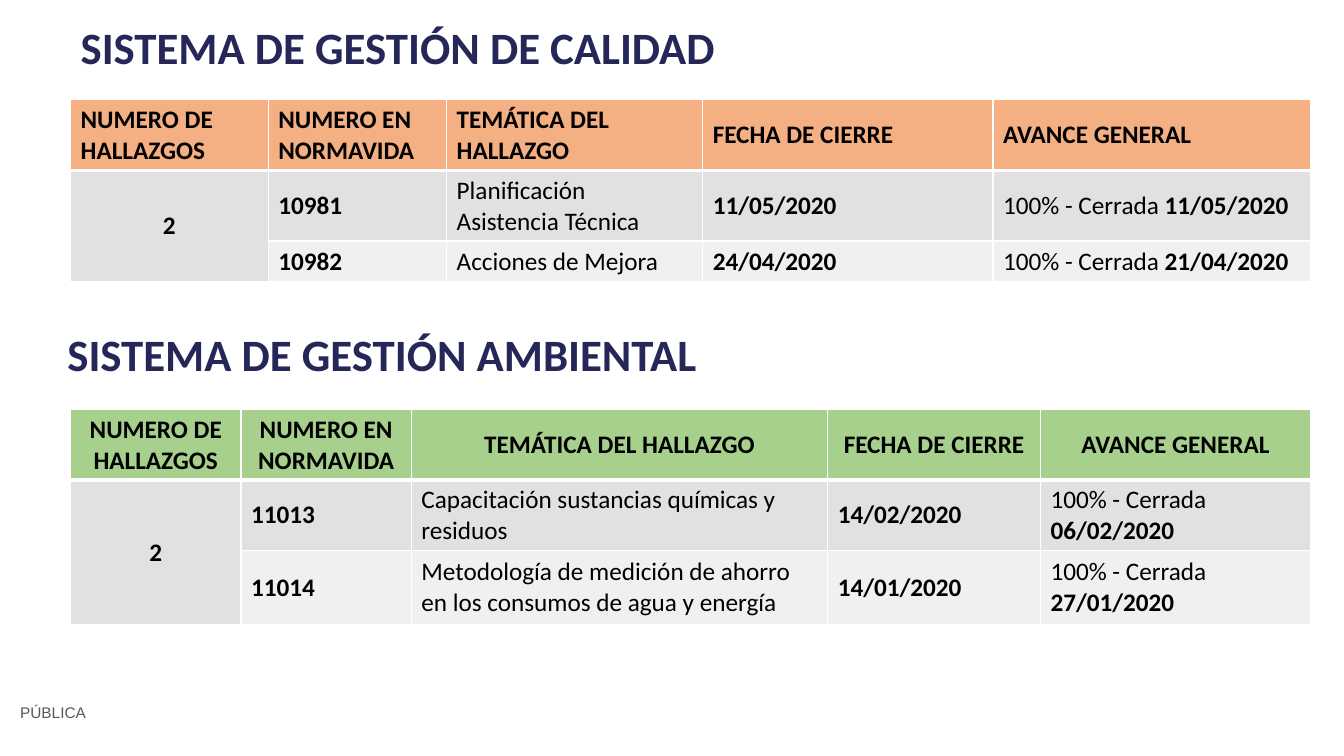
from dataclasses import dataclass

from lxml.etree import SubElement
from pptx import Presentation
from pptx.dml.color import RGBColor
from pptx.enum.text import MSO_ANCHOR as Anchor, MSO_AUTO_SIZE as AutoSize, PP_ALIGN as Align
from pptx.oxml.ns import qn
from pptx.util import Inches, Pt


@dataclass(frozen=True)
class Theme:
    font: str = "Calibri"
    label_font: str = "Arial"
    heading: str = "242758"
    label: str = "595959"
    text: str = "000000"
    border: str = "FFFFFF"
    bands: tuple = ("E1E1E1", "F0F0F0")
    heading_size: int = 32
    table_size: int = 18
    label_size: int = 11


@dataclass(frozen=True)
class Finding:
    number: str
    topic: str
    due: str
    closed: str


@dataclass(frozen=True)
class FindingsTable:
    top: float
    cols: tuple
    rows: tuple
    header_fill: str
    header_align: Align
    findings: tuple


THEME = Theme()
HEADERS = ("NUMERO DE HALLAZGOS", "NUMERO EN NORMAVIDA", "TEMÁTICA DEL HALLAZGO",
           "FECHA DE CIERRE", "AVANCE GENERAL")
TABLE_LEFT, TABLE_WIDTH = 0.7, 12.3
TABLES = (
    FindingsTable(0.99, (1.96, 1.77, 2.54, 2.88, 3.15), (0.7, 0.7, 0.4), "F4B083", Align.LEFT, (
        Finding("10981", "Planificación Asistencia Técnica", "11/05/2020", "11/05/2020"),
        Finding("10982", "Acciones de Mejora", "24/04/2020", "21/04/2020"))),
    FindingsTable(4.06, (1.69, 1.69, 4.13, 2.11, 2.68), (0.7, 0.7, 0.74), "A8D08D", Align.CENTER, (
        Finding("11013", "Capacitación sustancias químicas y residuos",
                "14/02/2020", "06/02/2020"),
        Finding("11014", "Metodología de medición de ahorro en los consumos de agua y energía",
                "14/01/2020", "27/01/2020"))),
)


def add_run(p, text: str, size: int, color: str, bold: bool, font: str = THEME.font) -> None:
    r = p.add_run()
    r.text = text
    for name, value in {"name": font, "size": Pt(size), "bold": bold}.items():
        setattr(r.font, name, value)
    r.font.color.rgb = RGBColor.from_string(color)


def write_box(sp, box: tuple, text: str, size: int, color: str, bold: bool, font: str) -> None:
    for name, value in zip(("left", "top", "width", "height"), box):
        setattr(sp, name, Inches(value))
    tf = sp.text_frame
    layout = {"word_wrap": True, "auto_size": AutoSize.SHAPE_TO_FIT_TEXT,
              "vertical_anchor": Anchor.TOP}
    for name, value in layout.items():
        setattr(tf, name, value)
    p = tf.paragraphs[0]
    p.alignment = Align.LEFT
    add_run(p, text, size, color, bold, font)


def set_borders(cell, row: int) -> None:
    """White rules, thicker between the header and the body."""
    widths = {"L": 1, "R": 1, "T": 3 if row == 1 else 1, "B": 3 if row == 0 else 1}
    tc_pr = cell._tc.get_or_add_tcPr()
    for side, width in widths.items():
        ln = SubElement(tc_pr, qn(f"a:ln{side}"), w=str(Pt(width)))
        fill = SubElement(ln, qn("a:solidFill"))
        SubElement(fill, qn("a:srgbClr"), val=THEME.border)


def write_cell(cell, runs: tuple, align: Align) -> None:
    p = cell.text_frame.paragraphs[0]
    p.alignment = align
    for text, bold in runs:
        add_run(p, text, THEME.table_size, THEME.text, bold)


def add_findings(s, data: FindingsTable) -> None:
    frame = s.shapes.add_table(len(data.rows), len(data.cols), Inches(TABLE_LEFT),
                               Inches(data.top), Inches(TABLE_WIDTH), Inches(sum(data.rows)))
    table = frame.table
    for col, width in zip(table.columns, data.cols):
        col.width = Inches(width)

    # Row heights, borders and fills
    fills = (data.header_fill, *THEME.bands)
    for i, (row, height) in enumerate(zip(table.rows, data.rows)):
        row.height = Inches(height)
        for cell in row.cells:
            set_borders(cell, i)
            cell.fill.solid()
            cell.fill.fore_color.rgb = RGBColor.from_string(fills[i])
            cell.vertical_anchor = Anchor.MIDDLE

    # Header and merged count
    for j, text in enumerate(HEADERS):
        write_cell(table.cell(0, j), ((text, True),), data.header_align)
    count = table.cell(1, 0)
    count.merge(table.cell(len(data.findings), 0))
    write_cell(count, ((str(len(data.findings)), True),), Align.CENTER)

    # Findings
    for i, f in enumerate(data.findings, start=1):
        row_runs = (((f.number, True),), ((f.topic, False),), ((f.due, True),),
                    (("100% - Cerrada ", False), (f.closed, True)))
        for j, runs in enumerate(row_runs, start=1):
            write_cell(table.cell(i, j), runs, Align.LEFT)


def main() -> None:
    prs = Presentation()
    prs.slide_width, prs.slide_height = Inches(13.33), Inches(7.5)
    s = prs.slides.add_slide(prs.slide_layouts[5])

    # Headings and classification label
    heading = (THEME.heading_size, THEME.heading, True, THEME.font)
    label = (THEME.label_size, THEME.label, False, THEME.label_font)
    texts = (
        (s.shapes.title, (0.7, 0.15, 9.87, 0.64), "SISTEMA DE GESTIÓN DE CALIDAD", heading),
        (None, (0.57, 3.19, 9.87, 0.64), "SISTEMA DE GESTIÓN AMBIENTAL", heading),
        (None, (0.1, 6.93, 1.19, 0.29), "PÚBLICA", label),
    )
    for holder, box, text, style in texts:
        sp = holder or s.shapes.add_textbox(*map(Inches, box))
        write_box(sp, box, text, *style)

    # Tables
    for findings_table in TABLES:
        add_findings(s, findings_table)

    prs.save("out.pptx")


if __name__ == "__main__":
    main()
